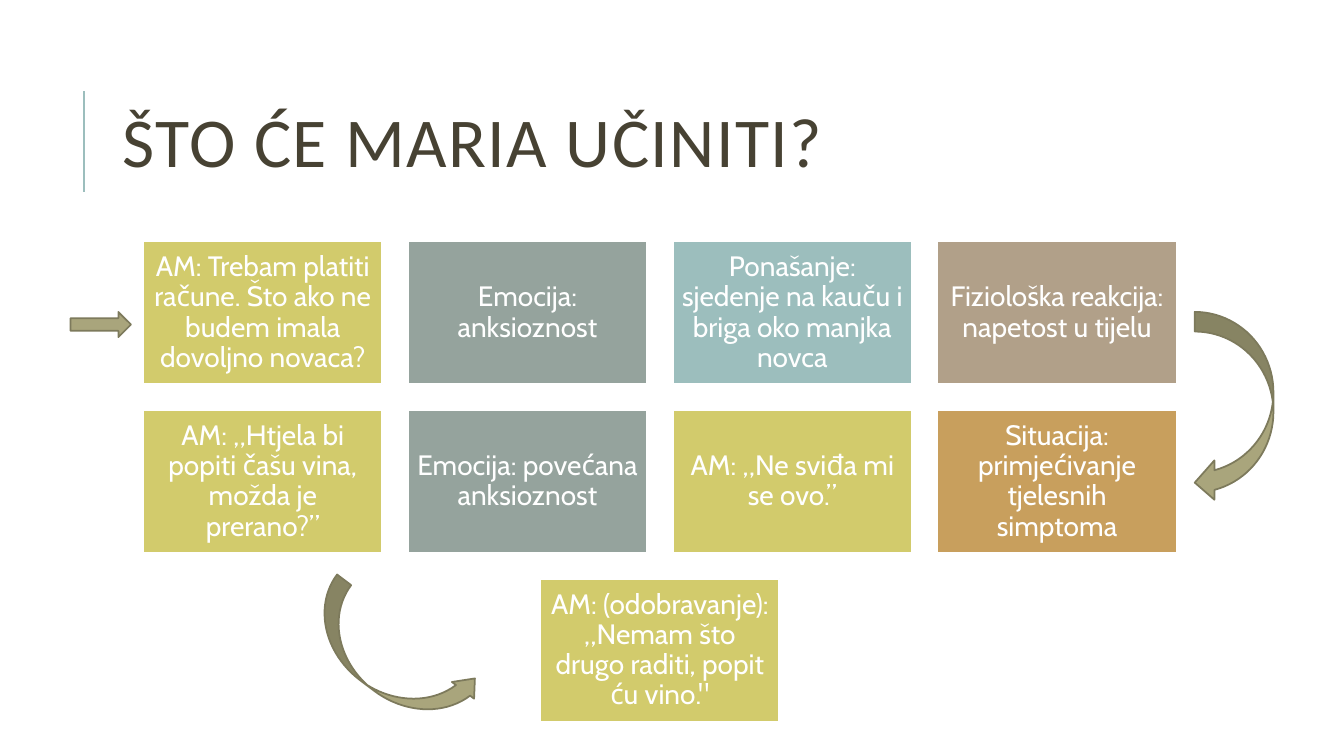
from lxml import etree
from pptx import Presentation
from pptx import util as u
from pptx.dml.color import RGBColor
from pptx.enum import shapes, text
from pptx.oxml.ns import qn

WHITE = RGBColor(0xFF, 0xFF, 0xFF)
INK = RGBColor(0x47, 0x42, 0x33)
LIME = RGBColor(0xD2, 0xCB, 0x6C)
SAGE = RGBColor(0x95, 0xA3, 0x9D)
TEAL = RGBColor(0x9C, 0xBE, 0xBD)
TAUPE = RGBColor(0xB1, 0xA0, 0x89)
OCHRE = RGBColor(0xC8, 0x9F, 0x5D)
KHAKI = RGBColor(0xA9, 0xA5, 0x7C)
KHAKI_EDGE = RGBColor(0x7D, 0x7A, 0x5C)

THOUGHT_ROWS = [
    [("AM: Trebam platiti račune. Što ako ne budem imala dovoljno novaca?", LIME),
     ("Emocija: anksioznost", SAGE),
     ("Ponašanje: sjedenje na kauču i briga oko manjka novca", TEAL),
     ("Fiziološka reakcija: napetost u tijelu", TAUPE)],
    [("AM: „Htjela bi popiti čašu vina, možda je prerano?”", LIME),
     ("Emocija: povećana anksioznost", SAGE),
     ("AM: „Ne sviđa mi se ovo.”", LIME),
     ("Situacija: primjećivanje tjelesnih simptoma", OCHRE)],
    [("AM: (odobravanje): „Nemam što drugo raditi, popit ću vino.\"", LIME)],
]


def write(frame, words, font, size, color, align, spacing, inset=None, tracking=None):
    """Fill a text frame with one formatted, vertically centred paragraph."""
    frame.word_wrap = True
    frame.vertical_anchor = text.MSO_ANCHOR.MIDDLE
    if inset is not None:
        frame.margin_left = frame.margin_right = u.Pt(inset)
        frame.margin_top = frame.margin_bottom = u.Pt(inset)
    paragraph = frame.paragraphs[0]
    paragraph.alignment = align
    paragraph.line_spacing = spacing
    run = paragraph.add_run()
    run.text = words
    run.font.name = font
    run.font.size = u.Pt(size)
    run.font.color.rgb = color
    if tracking is not None:
        run.font._element.set("spc", str(tracking * 100))


def add_block(slide, kind, box, fill, edge):
    """Add a flat preset shape with a thin outline."""
    block = slide.shapes.add_shape(kind, *map(u.Pt, box))
    block.shadow.inherit = False
    block.fill.solid()
    block.fill.fore_color.rgb = fill
    block.line.color.rgb = edge
    block.line.width = u.Pt(1.25)
    return block


def add_heading(slide, left, top, width, height):
    """Place the title and the accent rule at its left."""
    rule_x, rule_top, rule_bottom = left - 20.6, top + 19, top + 91
    accent = slide.shapes.add_connector(
        shapes.MSO_CONNECTOR.STRAIGHT,
        *map(u.Pt, (rule_x, rule_bottom, rule_x, rule_top)))
    accent.line.color.rgb = TEAL
    accent.line.width = u.Pt(1.5)
    etree.SubElement(accent._element.spPr, qn("a:effectLst"))
    title = slide.shapes.add_textbox(*map(u.Pt, (left, top, width, height)))
    write(title.text_frame, "ŠTO ĆE MARIA UČINITI?", "Calibri", 50, INK,
          text.PP_ALIGN.LEFT, 0.8, tracking=1)


def add_thought_grid(slide, left, top, width, height):
    """Place the rows of cards, each row centred in the box."""
    gap = 18.4
    card_width = (width - 3 * gap) / 4
    card_height = (height - 2 * gap) / 3
    for row, thoughts in enumerate(THOUGHT_ROWS):
        row_width = len(thoughts) * (card_width + gap) - gap
        row_left = left + (width - row_width) / 2
        for column, (words, fill) in enumerate(thoughts):
            box = (row_left + column * (card_width + gap),
                   top + row * (card_height + gap), card_width, card_height)
            card = add_block(slide, shapes.MSO_SHAPE.RECTANGLE, box, fill, WHITE)
            write(card.text_frame, words, "Cabin", 20, WHITE,
                  text.PP_ALIGN.CENTER, 0.9, inset=6)


def add_flow_arrows(slide, left, top, width, height):
    """Place the arrows that lead into, around and out of the card grid."""
    curve = shapes.MSO_SHAPE.CURVED_LEFT_ARROW
    entry_box = (left - 52, top + 50.4, 43.2, 18)
    turn_box = (left + width + 13, top + 50.4, 56.2, 136)
    exit_box = (left + 151.2, top + height - 111.6, 50.4, 133.2)
    add_block(slide, curve, turn_box, KHAKI, KHAKI_EDGE)
    add_block(slide, shapes.MSO_SHAPE.RIGHT_ARROW, entry_box, KHAKI, KHAKI_EDGE)
    exit_arrow = add_block(slide, curve, exit_box, KHAKI, KHAKI_EDGE)
    for index, ratio in enumerate((0.25, 0.393, 0.237)):
        exit_arrow.adjustments[index] = ratio
    exit_arrow.rotation = 307
    exit_arrow._element.spPr.find(qn("a:xfrm")).set("flipH", "1")


def main():
    """Build and save the slide."""
    deck = Presentation()
    deck.slide_width, deck.slide_height = u.Pt(960), u.Pt(540)
    slide = deck.slides.add_slide(deck.slide_layouts[6])
    grid_box = (102.4, 172.4, 738, 343.2)
    add_heading(slide, 80.6, 46.1, 765.4, 118.1)
    add_thought_grid(slide, *grid_box)
    add_flow_arrows(slide, *grid_box)
    deck.save("out.pptx")


if __name__ == "__main__":
    main()
